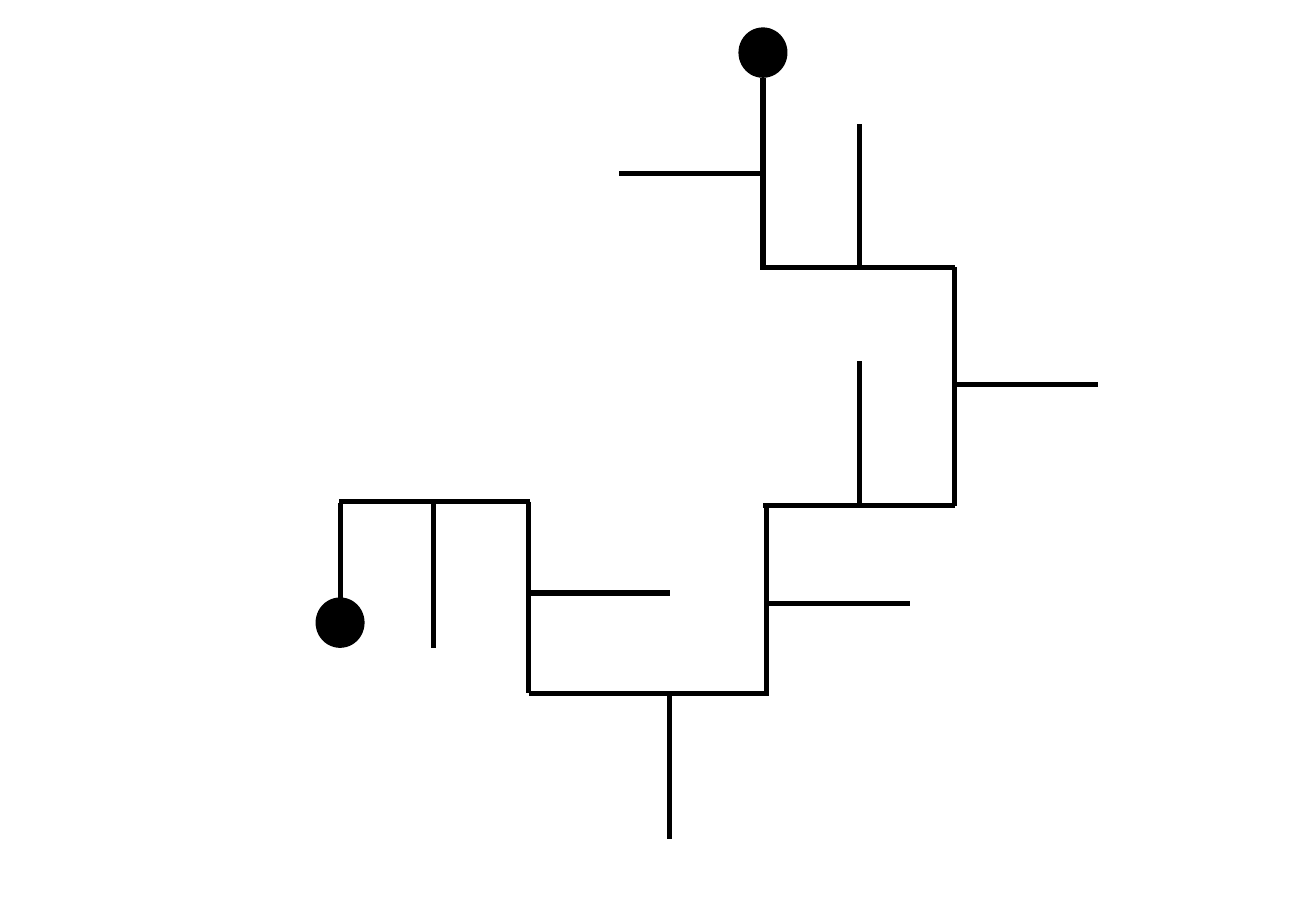
from lxml import etree
from pptx import Presentation
from pptx import util as u
from pptx.dml import color
from pptx.enum import shapes
from pptx.oxml import ns

COLORS = {"ink": "000000"}
INK = color.RGBColor.from_string(COLORS["ink"])
BRANCH = 3
NODE_W, NODE_H = 1.02, 0.99

prs = Presentation()
prs.slide_width, prs.slide_height = u.Cm(27.51), u.Cm(19.05)
s = prs.slides.add_slide(prs.slide_layouts[6])

backbone = [
    (7.11, 12.52, 7.11, 10.52),
    (7.09, 10.49, 11.07, 10.49),
    (11.05, 10.49, 11.05, 14.5),
    (11.05, 14.5, 16.05, 14.5),
    (16.03, 14.55, 16.03, 10.57),
    (15.95, 10.57, 19.96, 10.57),
    (19.96, 10.59, 19.96, 5.59),
    (19.96, 5.59, 15.95, 5.59),
    (15.95, 5.64, 15.95, 1.63),
]
branches = [
    (9.07, 10.54, 0, 1),
    (11, 12.4, 1, 0),
    (14, 14.55, 0, 1),
    (16.03, 12.62, 1, 0),
    (17.96, 10.54, 0, -1),
    (19.96, 8.05, 1, 0),
    (17.96, 5.59, 0, -1),
    (15.95, 3.63, -1, 0),
]
nodes = [(7.11, 13.02), (15.95, 1.1)]

for x, y in nodes:
    sp = s.shapes.add_shape(
        shapes.MSO_SHAPE.FLOWCHART_CONNECTOR,
        u.Cm(x - NODE_W / 2), u.Cm(y - NODE_H / 2), u.Cm(NODE_W), u.Cm(NODE_H))
    sp.rotation = 270
    sp.shadow.inherit = False
    sp.fill.solid()
    sp.fill.fore_color.rgb = INK
    sp.line.color.rgb = INK
    sp.line.width = u.Pt(1)

twigs = [(x, y, x + dx * BRANCH, y + dy * BRANCH) for x, y, dx, dy in branches]
for ends in backbone + twigs:
    ln = s.shapes.add_connector(shapes.MSO_CONNECTOR.STRAIGHT, *[u.Cm(v) for v in ends])
    ln.line.color.rgb = INK
    ln.line.width = u.Pt(3)
    etree.SubElement(ln._element.spPr, ns.qn("a:effectLst"))

prs.save("out.pptx")
